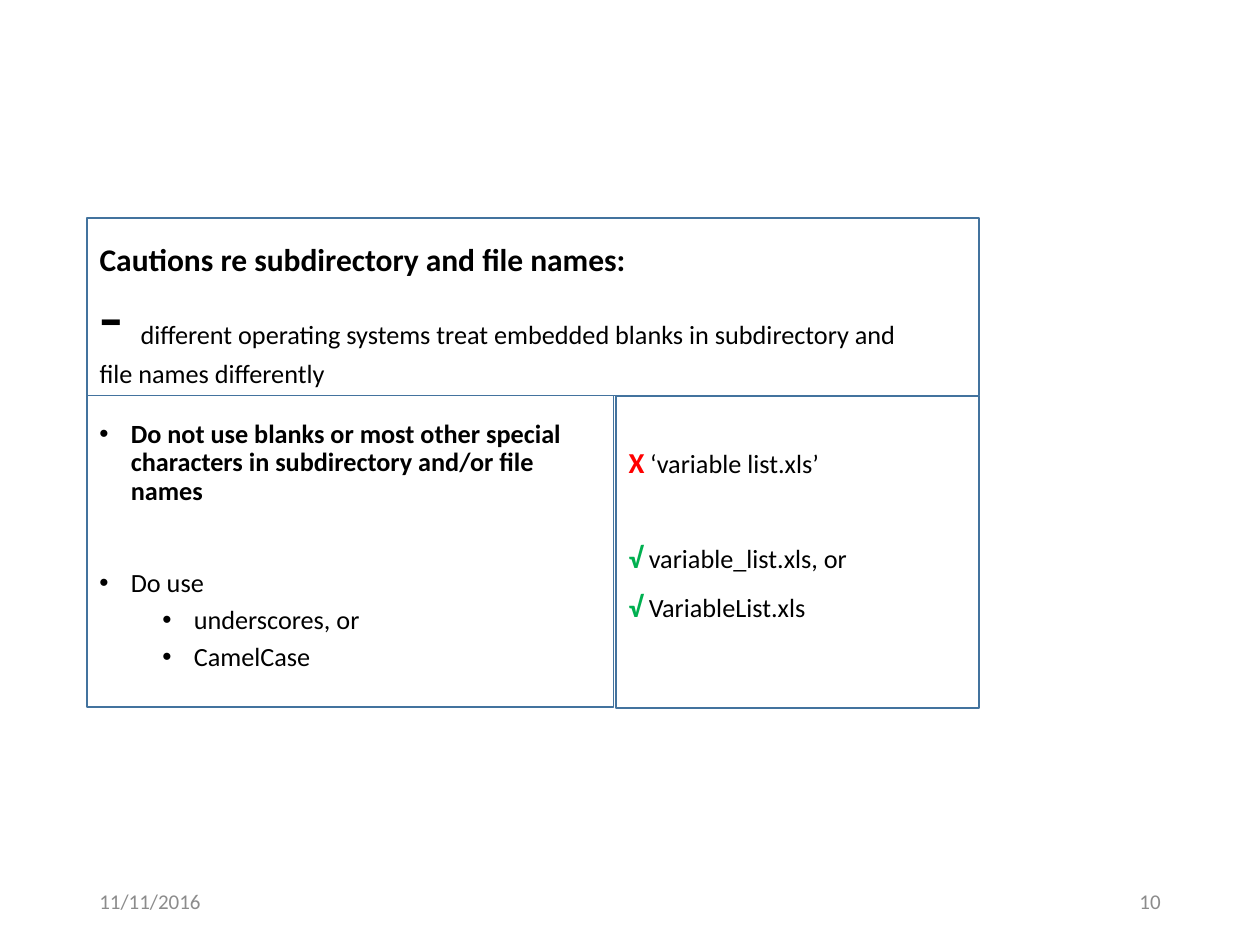
from lxml import etree
from pptx import Presentation
from pptx.dml.color import RGBColor
from pptx.enum import shapes, text
from pptx.oxml.ns import qn
from pptx.util import Inches, Pt

BLACK, RED, GREEN, GREY, BLUE = "000000", "FF0000", "00B050", "8C8C8C", "43739E"


def rgb(hex_color):
    return RGBColor.from_string(hex_color)


def add_run(p, content, size=15, color=BLACK, bold=False):
    r = p.add_run()
    r.text = content
    r.font.name = "Calibri"
    r.font.size = Pt(size)
    r.font.bold = bold
    r.font.color.rgb = rgb(color)
    return r


def set_bullet(p, left):
    """Give the paragraph a round bullet hanging 0.25 inch before its text."""
    pPr = p._p.get_or_add_pPr()
    pPr.set("marL", str(Inches(left)))
    pPr.set("indent", str(Inches(-0.25)))
    etree.SubElement(pPr, qn("a:buFont")).set("typeface", "Arial")
    etree.SubElement(pPr, qn("a:buChar")).set("char", "•")


def add_text_box(slide, x, y, w, h, anchor=text.MSO_ANCHOR.TOP):
    tf = slide.shapes.add_textbox(Inches(x), Inches(y), Inches(w), Inches(h)).text_frame
    tf.word_wrap = True
    tf.vertical_anchor = anchor
    return tf


def add_paragraph(tf, first, before=0):
    p = tf.paragraphs[0] if first else tf.add_paragraph()
    p.line_spacing = 0.9
    p.space_before = Pt(before)
    return p


def add_frame(slide, x, y, w, h):
    s = slide.shapes.add_shape(shapes.MSO_SHAPE.RECTANGLE,
                               Inches(x), Inches(y), Inches(w), Inches(h))
    s.shadow.inherit = False
    s.fill.background()
    s.line.color.rgb = rgb(BLUE)
    s.line.width = Pt(1)


def add_heading(slide, x, y, w, h):
    add_frame(slide, x, y, w, h)
    title = slide.shapes.title
    title.left, title.top = Inches(x), Inches(y + 0.15)
    title.width, title.height = Inches(6.79), Inches(1.27)
    tf = title.text_frame
    tf.word_wrap = True
    tf.auto_size = text.MSO_AUTO_SIZE.NONE
    tf.vertical_anchor = text.MSO_ANCHOR.MIDDLE
    p = add_paragraph(tf, first=True)
    p.alignment = text.PP_ALIGN.LEFT
    add_run(p, "Cautions re subdirectory and file names: ", size=18, bold=True)
    p.add_line_break()
    add_run(p, "- ", size=44)
    add_run(p, "different operating systems treat embedded blanks in "
               "subdirectory and file names differently")


def add_rules(slide, x, y, w, h):
    add_frame(slide, x, y, w, h)
    tf = add_text_box(slide, x, y + 0.15, w + 0.07, h - 0.15)
    rules = [
        ("Do not use blanks or most other special characters in "
         "subdirectory and/or file names", 0, 0, True),
        ("Do use", 0, 36.5, False),
        ("underscores, or", 1, 5, False),
        ("CamelCase", 1, 5, False),
    ]
    for i, (content, level, before, bold) in enumerate(rules):
        p = add_paragraph(tf, i == 0, before)
        p.level = level
        set_bullet(p, 0.25 + 0.5 * level)
        add_run(p, content, bold=bold)


def add_examples(slide, x, y, w, h):
    add_frame(slide, x, y, w, h)
    tf = add_text_box(slide, x, y + 0.37, w - 0.15, h - 0.57)
    examples = [
        ("Х", RED, " ‘variable list.xls’", 0),
        ("√", GREEN, " variable_list.xls, or", 36.5),
        ("√", GREEN, " VariableList.xls", 10),
    ]
    for i, (mark, color, content, before) in enumerate(examples):
        p = add_paragraph(tf, i == 0, before)
        add_run(p, mark, size=16.5, color=color, bold=True)
        add_run(p, content)


def add_footer(slide, x, y, w, h):
    items = [(x, "11/11/2016", text.PP_ALIGN.LEFT),
             (x + w - 2.25, "10", text.PP_ALIGN.RIGHT)]
    for left, content, align in items:
        tf = add_text_box(slide, left, y, 2.25, h, text.MSO_ANCHOR.MIDDLE)
        p = tf.paragraphs[0]
        p.alignment = align
        add_run(p, content, size=12, color=GREY)


def main():
    prs = Presentation()
    prs.slide_width, prs.slide_height = Inches(10), Inches(7.5)
    slide = prs.slides.add_slide(prs.slide_layouts[5])
    add_heading(slide, 0.69, 1.73, 7.08, 1.41)
    add_rules(slide, 0.69, 3.14, 4.18, 2.47)
    add_examples(slide, 4.89, 3.14, 2.88, 2.48)
    add_footer(slide, 0.69, 6.95, 8.62, 0.4)
    prs.save("out.pptx")


if __name__ == "__main__":
    main()
